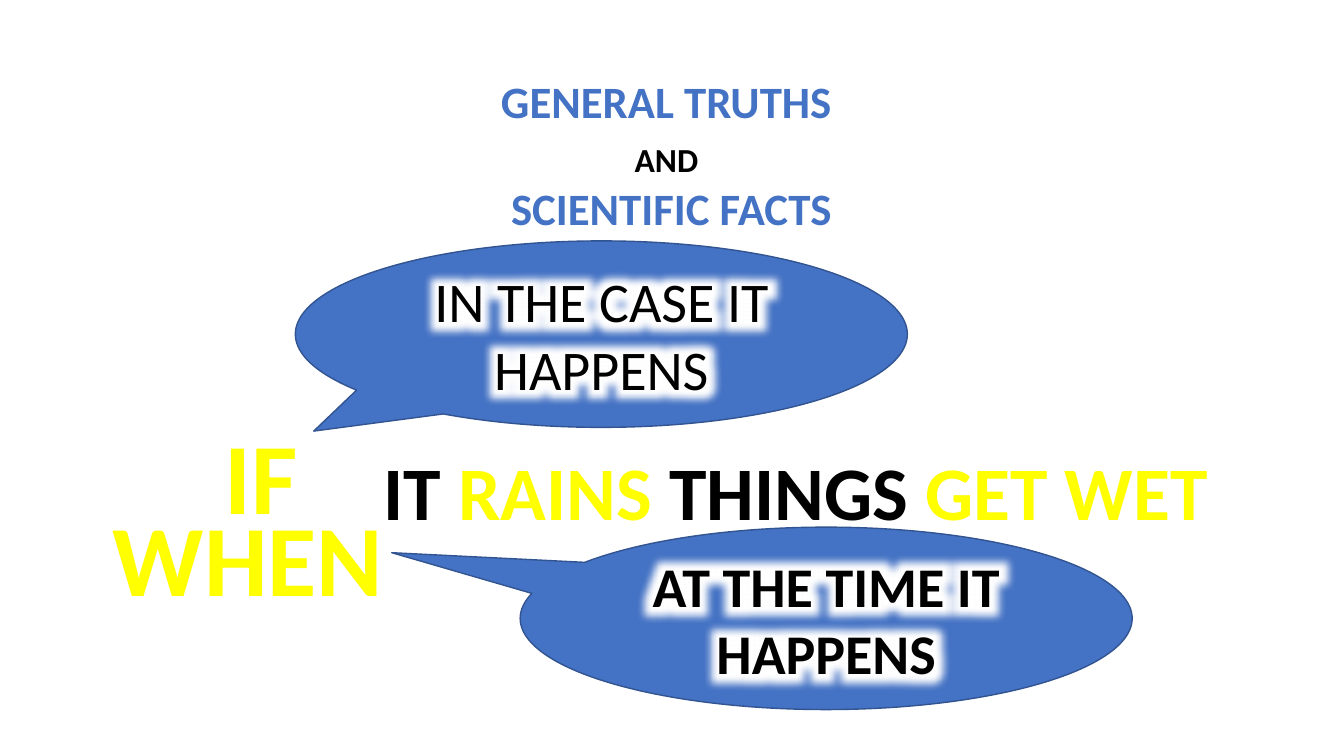
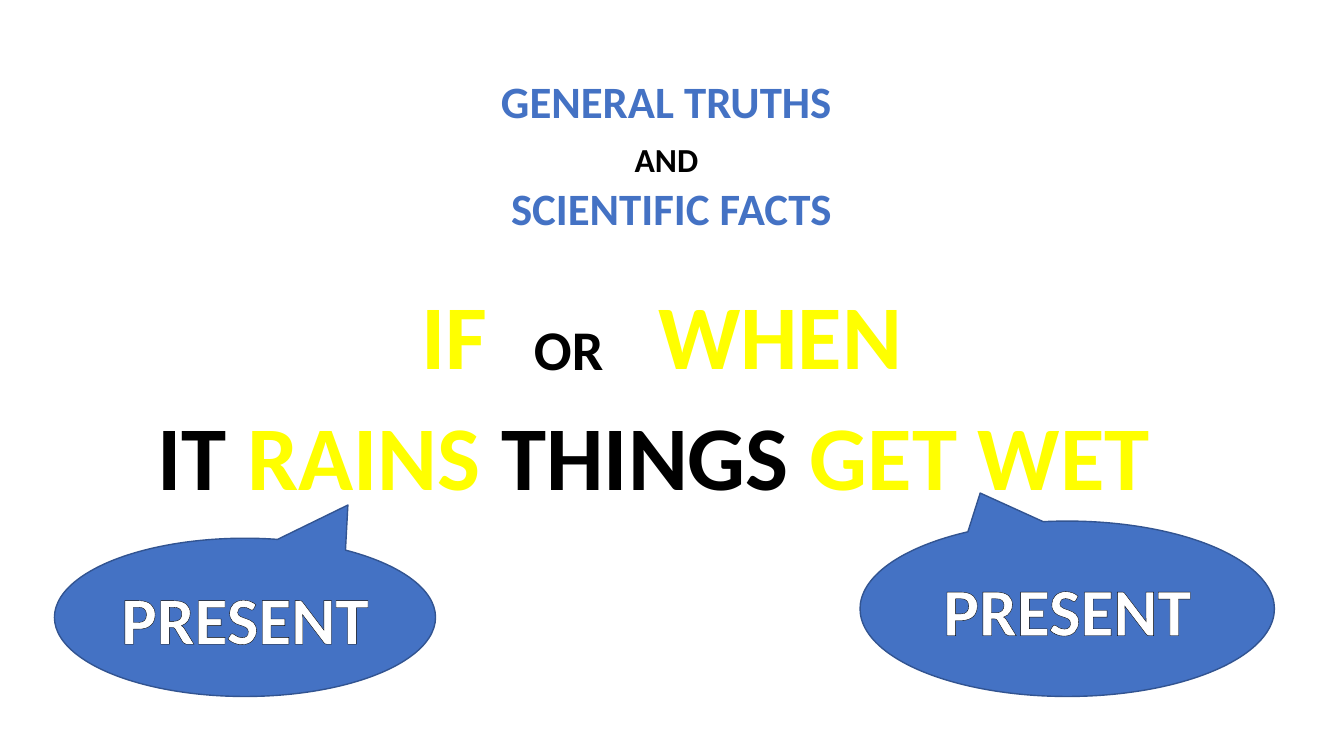
from dataclasses import dataclass

from lxml.etree import SubElement
from pptx import Presentation
from pptx.dml.color import RGBColor
from pptx.enum.shapes import MSO_SHAPE
from pptx.enum.text import MSO_ANCHOR, MSO_AUTO_SIZE, PP_ALIGN
from pptx.oxml import parse_xml
from pptx.oxml.ns import nsdecls, qn
from pptx.slide import Slide
from pptx.text.text import TextFrame
from pptx.util import Inches, Pt

COLORS = {
    "blue": "4472C4",
    "edge": "325491",
    "yellow": "FFFF00",
    "black": "000000",
    "white": "FFFFFF",
}
FONT = "Calibri"
GLOW = 28


@dataclass(frozen=True)
class Run:
    text: str
    size: float
    color: str = "black"
    edge: float = 0
    bold: bool = True
    glow: float = 0


@dataclass(frozen=True)
class Box:
    left: float
    top: float
    width: float
    height: float

    def place(self) -> tuple[int, int, int, int]:
        return (Inches(self.left), Inches(self.top),
                Inches(self.width), Inches(self.height))


@dataclass(frozen=True)
class Label:
    box: Box
    runs: list[Run]
    align: PP_ALIGN = PP_ALIGN.LEFT


@dataclass(frozen=True)
class Bubble:
    box: Box
    tip: tuple[float, float]
    run: Run


TITLE_BOX = Box(4.79, 0.68, 3.74, 1.72)
TITLE = [
    [Run("GENERAL TRUTHS ", 32, "blue", 0.75)],
    [Run("AND", 24), Run(" ", 32)],
    [Run("SCIENTIFIC FACTS", 32, "blue", 0.75)],
]


def rgb(name: str) -> RGBColor:
    return RGBColor.from_string(COLORS[name])


def add_fill(parent, name: str) -> None:
    fill = SubElement(parent, qn("a:solidFill"))
    SubElement(fill, qn("a:srgbClr"), val=COLORS[name])


def write(frame: TextFrame, lines: list[list[Run]], align: PP_ALIGN) -> None:
    for index, line in enumerate(lines):
        para = frame.paragraphs[0] if index == 0 else frame.add_paragraph()
        para.alignment = align
        for item in line:
            run = para.add_run()
            run.text = item.text
            style = {"name": FONT, "size": Pt(item.size), "bold": item.bold}
            for key, value in style.items():
                setattr(run.font, key, value)
            run.font.color.rgb = rgb(item.color)
            add_effects(run.font, item)


def add_effects(font, item: Run) -> None:
    """Outline the letters and put a white glow behind them."""
    props = font._element
    if item.edge:
        line = parse_xml(f'<a:ln {nsdecls("a")} w="{Pt(item.edge)}"/>')
        add_fill(line, "black")
        props.insert(0, line)
    if item.glow:
        effects = parse_xml(f'<a:effectLst {nsdecls("a")}/>')
        glow = SubElement(effects, qn("a:glow"), rad=str(Pt(item.glow)))
        SubElement(glow, qn("a:srgbClr"), val=COLORS["white"])
        props.find(qn("a:latin")).addprevious(effects)


def add_title(slide: Slide) -> None:
    title = slide.shapes.title
    title.left, title.top, title.width, title.height = TITLE_BOX.place()
    style = {"word_wrap": True, "auto_size": MSO_AUTO_SIZE.NONE,
             "vertical_anchor": MSO_ANCHOR.TOP}
    for key, value in style.items():
        setattr(title.text_frame, key, value)
    write(title.text_frame, TITLE, PP_ALIGN.CENTER)


def add_label(slide: Slide, label: Label) -> None:
    frame = slide.shapes.add_textbox(*label.box.place()).text_frame
    frame.word_wrap = True
    write(frame, [label.runs], label.align)


def add_bubble(slide: Slide, bubble: Bubble) -> None:
    shape = slide.shapes.add_shape(MSO_SHAPE.OVAL_CALLOUT, *bubble.box.place())
    for index, value in enumerate(bubble.tip):
        shape.adjustments[index] = value
    shape.shadow.inherit = False
    shape.fill.solid()
    shape.fill.fore_color.rgb = rgb("blue")
    shape.line.color.rgb = rgb("edge")
    shape.line.width = Pt(1)
    shape.text_frame.word_wrap = True
    shape.text_frame.vertical_anchor = MSO_ANCHOR.MIDDLE
    write(shape.text_frame, [[bubble.run]], PP_ALIGN.CENTER)


def rain(box: Box, size: float, edge: float) -> Label:
    """Give the example sentence with its verbs in yellow."""
    runs = [
        Run("IT ", size),
        Run("RAINS ", size, "yellow", edge),
        Run("THINGS", size),
        Run(" GET WET ", size, "yellow", edge),
    ]
    return Label(box, runs, PP_ALIGN.CENTER)


def word(text: str, box: Box, size: float, edge: float) -> Label:
    return Label(box, [Run(text, size, "yellow", edge)])


PRESENT = Run("PRESENT", 48, "white", 1.5)
SLIDES = [
    (
        [
            rain(Box(1.93, 4.36, 12.09, 1.01), 54, 3),
            word("IF", Box(2.13, 4.06, 0.95, 1.31), 72, 3),
            word("WHEN", Box(1.02, 4.87, 2.97, 1.31), 72, 3),
        ],
        [
            Bubble(Box(2.93, 2.39, 6.07, 1.85), (-0.47, 0.52),
                   Run("IN THE CASE IT HAPPENS", 40, edge=1.5,
                       bold=False, glow=GLOW)),
            Bubble(Box(5.16, 5.23, 6.07, 1.81), (-0.71, -0.36),
                   Run("AT THE TIME IT HAPPENS", 40, glow=GLOW)),
        ],
    ),
    (
        [
            rain(Box(0.54, 3.91, 12.09, 1.19), 65, 2.25),
            word("IF", Box(4.08, 2.71, 0.95, 1.19), 65, 2.25),
            Label(Box(5.18, 3.07, 0.92, 0.77), [Run("OR", 40)],
                  PP_ALIGN.CENTER),
            word("WHEN", Box(6.43, 2.71, 2.64, 1.19), 65, 2.25),
        ],
        [
            Bubble(Box(0.54, 5.34, 3.78, 1.57), (0.27, -0.71), PRESENT),
            Bubble(Box(8.53, 5.17, 4.11, 1.74), (-0.21, -0.66), PRESENT),
        ],
    ),
]


def main() -> None:
    deck = Presentation()
    deck.slide_width, deck.slide_height = Inches(13.33), Inches(7.5)
    for labels, bubbles in SLIDES:
        slide = deck.slides.add_slide(deck.slide_layouts[5])
        add_title(slide)
        for label in labels:
            add_label(slide, label)
        for bubble in bubbles:
            add_bubble(slide, bubble)
    deck.save("out.pptx")


if __name__ == "__main__":
    main()
